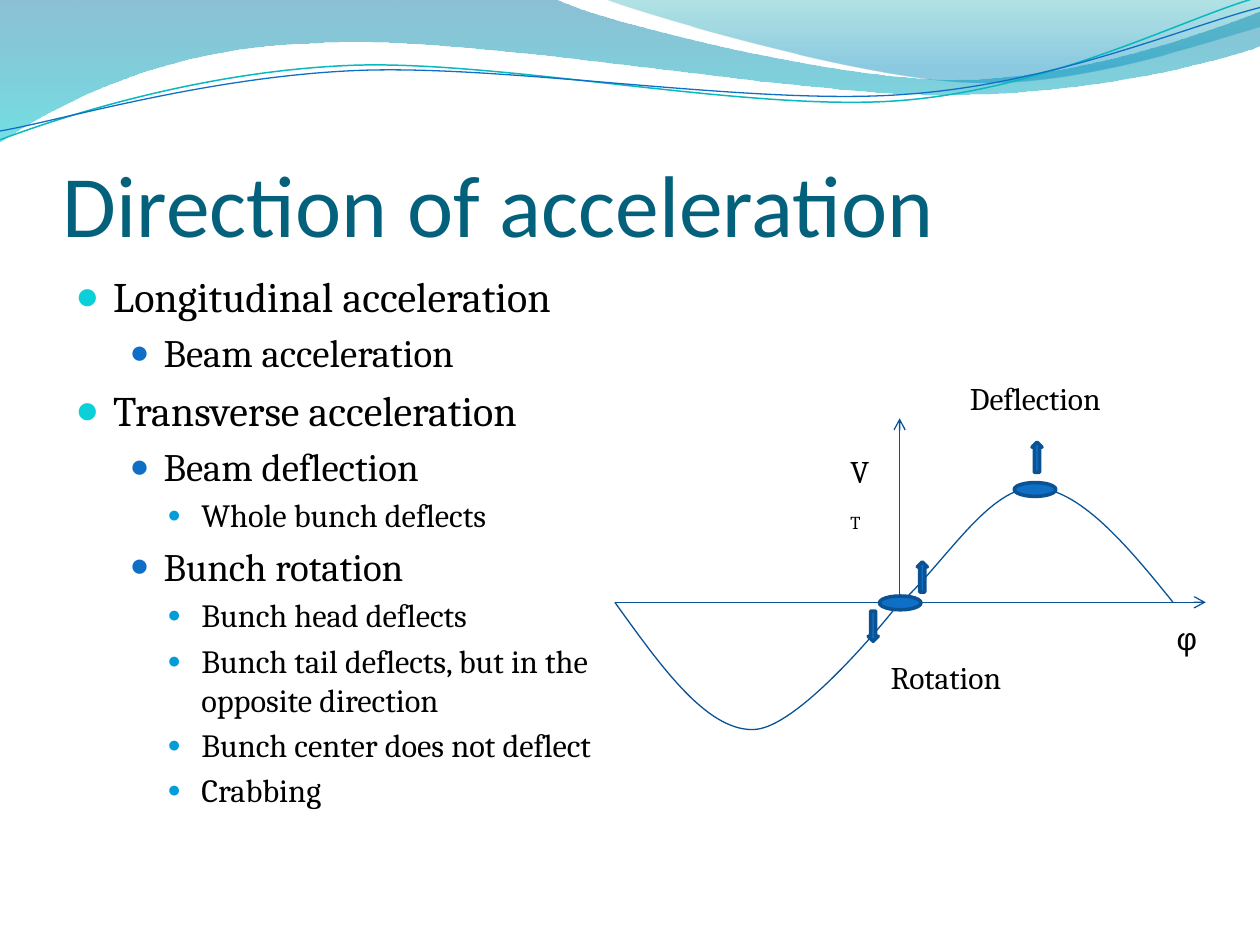
"""Build the slide on the direction of acceleration."""
from dataclasses import dataclass

from lxml import etree
from pptx import Presentation
from pptx.dml.color import RGBColor
from pptx.enum import shapes, text
from pptx.oxml import ns
from pptx.util import Inches, Pt


@dataclass(frozen=True)
class Theme:
    """Colours, fonts and type sizes of the slide."""
    title: str = "04617B"
    ink: str = "000000"
    accent: str = "0F6FC6"
    outline: str = "0B5292"
    axis: str = "095295"
    teal_wave: str = "0AB8BF"
    title_font: str = "Calibri"
    body_font: str = "Cambria"
    symbol_font: str = "Arial"
    title_size: float = 50
    label_size: float = 18
    band: tuple = ((0, "0074A1", 45), (100, "00C6CF", 55))
    band_light: tuple = ((0, "00A1A9", 30), (80, "008BBF", 45))
    # size, indent, hanging, bullet colour, bullet percent
    levels: tuple = ((24.05, 0.3, 0.3, "0BD0D9", 95),
                     (22.2, 0.7, 0.27, "0F6FC6", 85),
                     (18.5, 1.0, 0.27, "009DD9", 70))


THEME = Theme()

BAND = [(0, 0), (4.4, -0.01),
        (4.76, 0.17, 6.64, 0.63, 7.58, 0.63), (8.53, 0.63, 9.58, 0.26, 10, 0.09),
        (10.01, 0.36),
        (9.83, 0.44, 8.7, 0.76, 7.46, 0.75), (6.22, 0.75, 3.82, 0.28, 2.57, 0.34),
        (1.29, 0.36, 0.46, 0.83, -0.01, 1.13)]
BAND_LIGHT = [(4.79, -0.01), (5.09, 0.11, 6.82, 0.62, 7.69, 0.65),
              (8.56, 0.69, 9.61, 0.32, 10, 0.21), (10, 0)]
TEAL_WAVE = [(0, 1.11), (0.48, 0.93, 1.58, 0.57, 2.77, 0.52),
             (3.95, 0.47, 5.93, 0.89, 7.13, 0.8), (8.33, 0.71, 9.38, 0.15, 9.98, -0.02)]
BLUE_WAVE = [(0, 1.04), (0.47, 0.96, 1.64, 0.61, 2.83, 0.56),
             (4.03, 0.51, 5.97, 0.84, 7.17, 0.75), (8.36, 0.67, 9.41, 0.21, 10, 0.06)]
VOLTAGE = [(4.88, 4.78), (5.24, 5.28, 5.6, 5.79, 5.97, 5.79),
           (6.34, 5.8, 7.11, 4.82, 7.11, 4.82), (7.48, 4.5, 7.83, 3.88, 8.2, 3.87),
           (8.56, 3.87, 8.94, 4.32, 9.31, 4.78)]

OUTLINE = [(0, "Longitudinal acceleration"), (1, "Beam acceleration"),
           (0, "Transverse acceleration"), (1, "Beam deflection"),
           (2, "Whole bunch deflects"), (1, "Bunch rotation"),
           (2, "Bunch head deflects"),
           (2, "Bunch tail deflects, but in the opposite direction"),
           (2, "Bunch center does not deflect"), (2, "Crabbing")]


def rgb(code):
    """Turn a hex code into a colour."""
    return RGBColor.from_string(code)


def add(parent, tag, **attributes):
    """Append a DrawingML element."""
    return etree.SubElement(parent, ns.qn(tag), {k: str(v) for k, v in attributes.items()})


def draw_outline(slide, segments, close):
    """Draw a freeform whose six-number segments are Bezier curves."""
    ends = [(Inches(s[-2]), Inches(s[-1])) for s in segments]
    builder = slide.shapes.build_freeform(*ends[0])
    builder.add_line_segments(ends[1:], close=close)
    outline = builder.convert_to_shape()
    outline.shadow.inherit = False
    steps = list(outline.element.spPr.iter(ns.qn("a:lnTo")))
    for step, segment in zip(steps, segments[1:]):
        if len(segment) == 6:
            bend = etree.Element(ns.qn("a:cubicBezTo"))
            for x, y in zip(segment[::2], segment[1::2]):
                add(bend, "a:pt", x=Inches(x) - outline.left, y=Inches(y) - outline.top)
            step.getparent().replace(step, bend)
    return outline


def add_band(slide, segments, stops):
    """Draw a closed band with a translucent vertical gradient."""
    band = draw_outline(slide, segments, True)
    band.line.fill.background()
    gradient = etree.Element(ns.qn("a:gradFill"), rotWithShape="1")
    stop_list = add(gradient, "a:gsLst")
    for position, code, opacity in stops:
        stop = add(stop_list, "a:gs", pos=position * 1000)
        add(add(stop, "a:srgbClr", val=code), "a:alpha", val=opacity * 1000)
    add(gradient, "a:lin", ang=5400000, scaled=1)
    band.element.spPr.find(ns.qn("a:custGeom")).addnext(gradient)


def add_curve(slide, segments, color, width):
    """Draw an open curve."""
    curve = draw_outline(slide, segments, False)
    curve.fill.background()
    curve.line.color.rgb = rgb(color)
    curve.line.width = Pt(width)


def add_axis(slide, start, end):
    """Draw an axis with an open arrowhead at its end."""
    axis = slide.shapes.add_connector(shapes.MSO_CONNECTOR.STRAIGHT,
                                      *(Inches(v) for v in start + end))
    axis.line.color.rgb = rgb(THEME.axis)
    axis.line.width = Pt(0.75)
    add(axis.element.spPr.find(ns.qn("a:ln")), "a:tailEnd", type="arrow")
    add(axis.element.spPr, "a:effectLst")


def add_marker(slide, kind, box):
    """Draw a bunch or a force arrow."""
    marker = slide.shapes.add_shape(kind, *(Inches(v) for v in box))
    marker.shadow.inherit = False
    marker.fill.solid()
    marker.fill.fore_color.rgb = rgb(THEME.accent)
    marker.line.color.rgb = rgb(THEME.outline)
    marker.line.width = Pt(2)


def style(font, name, size, color):
    """Set the face, size and colour of a font."""
    font.name, font.size, font.color.rgb = name, Pt(size), rgb(color)


def add_frame(slide, box, wrap=True):
    """Add a text box and return its frame."""
    frame = slide.shapes.add_textbox(*(Inches(v) for v in box)).text_frame
    frame.word_wrap = wrap
    return frame


def add_title(slide, words):
    """Write the slide title on the bottom of its box."""
    frame = add_frame(slide, (0.5, 0.77, 9, 1.25))
    frame.margin_left = frame.margin_right = frame.margin_bottom = 0
    frame.vertical_anchor = text.MSO_ANCHOR.BOTTOM
    frame.text = words
    style(frame.paragraphs[0].runs[0].font, THEME.title_font, THEME.title_size, THEME.title)


def add_bullets(slide, items):
    """Write the bulleted outline."""
    frame = add_frame(slide, (0.5, 2.1, 4.42, 4.85))
    frame.text = "\n".join(words for _, words in items)
    for index, (paragraph, (level, _)) in enumerate(zip(frame.paragraphs, items)):
        size, indent, hanging, color, percent = THEME.levels[level]
        paragraph.level = level
        paragraph.space_before = Pt(0.2 * size if index else 0)
        properties = paragraph._p.get_or_add_pPr()
        properties.set("marL", str(Inches(indent)))
        properties.set("indent", str(-Inches(hanging)))
        add(add(properties, "a:buClr"), "a:srgbClr", val=color)
        add(properties, "a:buSzPct", val=percent * 1000)
        add(properties, "a:buFont", typeface=THEME.symbol_font)
        add(properties, "a:buChar", char="●")
        style(paragraph.runs[0].font, THEME.body_font, size, THEME.ink)


def add_label(slide, words, box, font=THEME.body_font, subscript="", wrap=False):
    """Write a diagram label, with a subscript if one is given."""
    frame = add_frame(slide, box, wrap)
    frame.auto_size = text.MSO_AUTO_SIZE.SHAPE_TO_FIT_TEXT
    frame.text = words
    paragraph = frame.paragraphs[0]
    if subscript:
        index = paragraph.add_run()
        index.text = subscript
        index.font._element.set("baseline", "-25000")
    for run in paragraph.runs:
        style(run.font, font, THEME.label_size, THEME.ink)


def main():
    """Build and save the slide."""
    deck = Presentation()
    deck.slide_width, deck.slide_height = Inches(10), Inches(7.5)
    slide = deck.slides.add_slide(deck.slide_layouts[6])

    add_band(slide, BAND, THEME.band)
    add_band(slide, BAND_LIGHT, THEME.band_light)
    add_curve(slide, TEAL_WAVE, THEME.teal_wave, 0.85)
    add_curve(slide, BLUE_WAVE, THEME.accent, 0.75)
    add_title(slide, "Direction of acceleration")
    add_bullets(slide, OUTLINE)

    add_curve(slide, VOLTAGE, THEME.axis, 0.75)
    add_axis(slide, (4.88, 4.78), (9.57, 4.78))
    add_axis(slide, (7.14, 4.78), (7.14, 3.32))
    for left, top in ((8.05, 3.83), (6.98, 4.73)):
        add_marker(slide, shapes.MSO_SHAPE.OVAL, (left, top, 0.33, 0.11))
    add_label(slide, "V", (6.65, 3.54, 0.34, 0.28), subscript="T", wrap=True)
    add_label(slide, "φ", (9.24, 4.86, 0.23, 0.28), THEME.symbol_font)
    for kind, left, top in ((shapes.MSO_SHAPE.DOWN_ARROW, 6.89, 4.85),
                            (shapes.MSO_SHAPE.UP_ARROW, 7.28, 4.46),
                            (shapes.MSO_SHAPE.UP_ARROW, 8.19, 3.51)):
        add_marker(slide, kind, (left, top, 0.08, 0.24))
    add_label(slide, "Rotation", (6.97, 5.17, 1.15, 0.4))
    add_label(slide, "Deflection", (7.6, 2.96, 1.36, 0.4))
    deck.save("out.pptx")


if __name__ == "__main__":
    main()
